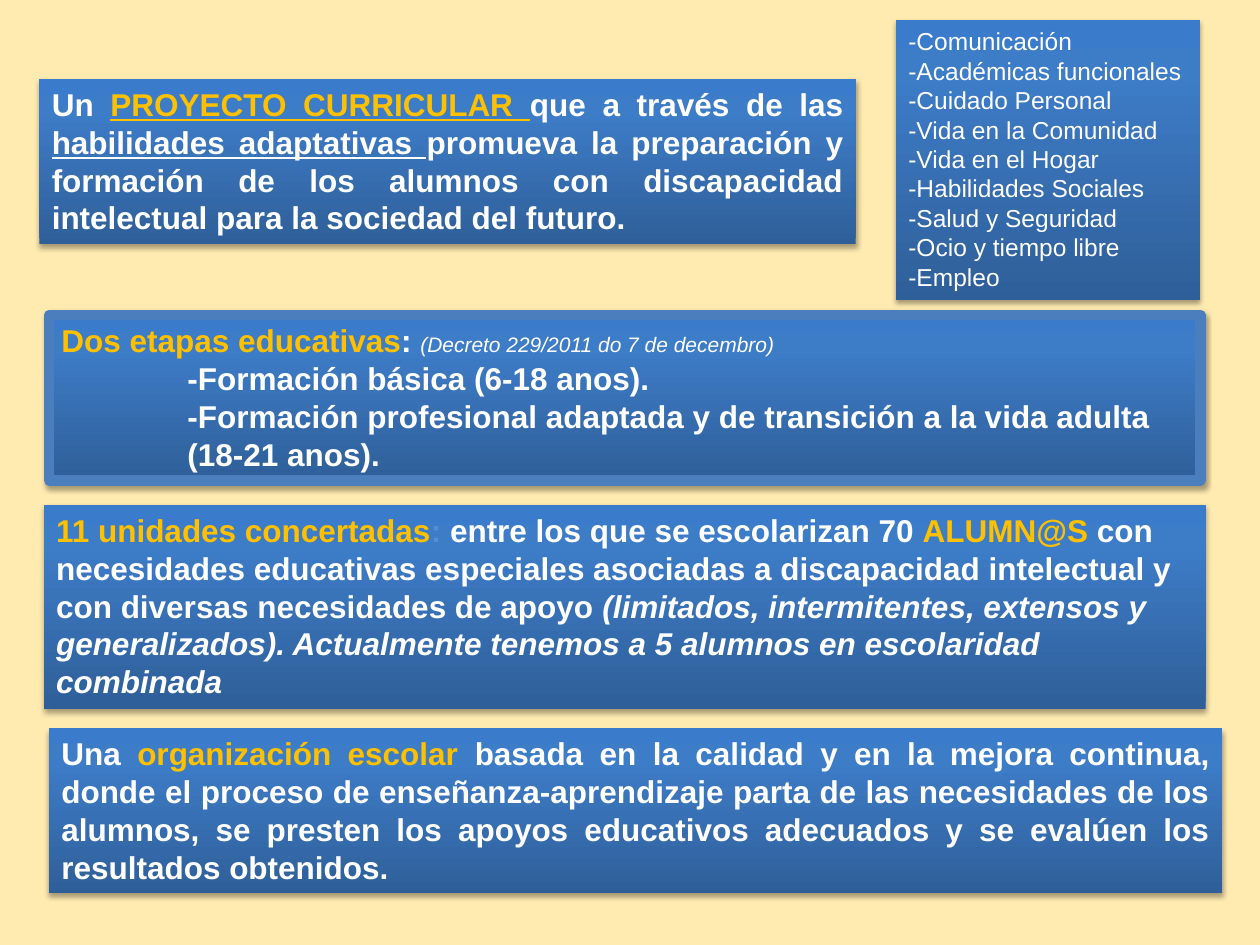
"""Build the slide that sums up a school's curricular project in five panels."""
from dataclasses import dataclass

from lxml import etree
from pptx import Presentation
from pptx.dml.color import RGBColor
from pptx.enum.shapes import MSO_SHAPE
from pptx.enum.text import MSO_ANCHOR, MSO_AUTO_SIZE, PP_ALIGN
from pptx.oxml.ns import qn
from pptx.util import Pt

RECTANGLE = MSO_SHAPE.RECTANGLE
TOP = MSO_ANCHOR.TOP
FIT_SHAPE = MSO_AUTO_SIZE.SHAPE_TO_FIT_TEXT
LEFT, JUSTIFY = PP_ALIGN.LEFT, PP_ALIGN.JUSTIFY


@dataclass(frozen=True)
class Theme:
    font: str = "Arial"
    background: str = "FFEBB0"
    text: str = "FFFFFF"
    accent: str = "FFC000"
    pale: str = "558ED5"
    border: str = "4B7EBC"
    gradient: tuple = ((0, "2F5F99"), (80, "3D7CC7"), (100, "3A7CCB"))
    body: int = 18
    list_size: int = 14
    note: int = 12
    indent: int = 72


THEME = Theme()
ACCENT = {"color": THEME.accent}
ITALIC = {"italic": True}
UNDERLINE = {"underline": True}
SKILLS = [
    "Comunicación", "Académicas funcionales", "Cuidado Personal",
    "Vida en la Comunidad", "Vida en el Hogar", "Habilidades Sociales",
    "Salud y Seguridad", "Ocio y tiempo libre", "Empleo",
]
STAGES = [
    "Formación básica (6-18 anos).",
    "Formación profesional adaptada y de transición a la vida adulta (18-21 anos).",
]
PANELS = [
    {
        "box": (28, 180, 658, 94.5),
        "border": 6,
        "paragraphs": [
            {"runs": [
                ("Dos etapas educativas", ACCENT),
                (": ", {}),
                ("(Decreto 229/2011 do 7 de decembro)",
                 {"size": THEME.note, "bold": False, "italic": True}),
            ]},
            *({"runs": [("-" + stage, {})], "indent": THEME.indent} for stage in STAGES),
        ],
    },
    {
        "box": (28, 416, 670.5, 94.5),
        "paragraphs": [{"align": JUSTIFY, "runs": [
            ("Una ", {}),
            ("organización escolar ", ACCENT),
            ("basada en la calidad y en la mejora continua, donde el proceso de "
             "enseñanza-aprendizaje parta de las necesidades de los alumnos, se presten "
             "los apoyos educativos adecuados y se evalúen los resultados obtenidos.", {}),
        ]}],
    },
    {
        "box": (25, 288.5, 664, 116.5),
        "paragraphs": [{"runs": [
            ("11 unidades concertadas", ACCENT),
            (": ", {"color": THEME.pale}),
            ("entre los que se escolarizan 70 ", {}),
            ("ALUMN@S ", ACCENT),
            ("con necesidades educativas especiales asociadas a discapacidad intelectual "
             "y con diversas necesidades de apoyo ", {}),
            ("(limitados, intermitentes, extensos y generalizados). Actualmente tenemos "
             "a 5 alumnos en escolaridad combinada", ITALIC),
        ]}],
    },
    {
        "box": (22.5, 45, 466.5, 94.5),
        "paragraphs": [{"align": JUSTIFY, "runs": [
            ("Un ", {}),
            ("PROYECTO CURRICULAR ", ACCENT | UNDERLINE),
            ("que a través de las ", {}),
            ("habilidades adaptativas ", UNDERLINE),
            ("promueva la preparación y formación de los alumnos con discapacidad "
             "intelectual para la sociedad del futuro.", {}),
        ]}],
    },
    {
        "box": (512, 11.5, 174, 160),
        "paragraphs": [
            {"runs": [("-" + skill, {"size": THEME.list_size, "bold": False})]}
            for skill in SKILLS
        ],
    },
]


def add_text(paragraph, text, size=THEME.body, color=THEME.text, bold=True,
             italic=False, underline=False):
    run = paragraph.add_run()
    run.text = text
    font = run.font
    font.name, font.size = THEME.font, Pt(size)
    font.bold, font.italic, font.underline = bold, italic, underline
    font.color.rgb = RGBColor.from_string(color)


def add_color(parent, color):
    return etree.SubElement(parent, qn("a:srgbClr"), val=color)


def style_panel(shape, border):
    shape.fill.gradient()
    shape.fill.gradient_angle = 90
    properties = shape.element.spPr
    stops = properties.find(".//" + qn("a:gsLst"))
    for stop in list(stops):
        stops.remove(stop)
    for position, color in THEME.gradient:
        add_color(etree.SubElement(stops, qn("a:gs"), pos=str(position * 1000)), color)

    if border:
        shape.line.color.rgb = RGBColor.from_string(THEME.border)
        shape.line.width = Pt(border)
    else:
        shape.line.fill.background()

    shape.shadow.inherit = False
    shadow = etree.SubElement(
        properties.find(qn("a:effectLst")), qn("a:outerShdw"),
        blurRad=str(Pt(3.1)), dist=str(Pt(1.8)), dir="5400000", rotWithShape="0")
    etree.SubElement(add_color(shadow, "000000"), qn("a:alpha"), val="35000")


def add_panel(slide, box, paragraphs, border=0):
    shape = slide.shapes.add_shape(RECTANGLE, *(Pt(length) for length in box))
    style_panel(shape, border)
    frame = shape.text_frame
    frame.word_wrap = True
    frame.auto_size = FIT_SHAPE
    frame.vertical_anchor = TOP
    for index, content in enumerate(paragraphs):
        paragraph = frame.add_paragraph() if index else frame.paragraphs[0]
        paragraph.alignment = content.get("align", LEFT)
        if "indent" in content:
            paragraph.level = 2
            paragraph._p.get_or_add_pPr().set("marL", str(Pt(content["indent"])))
        for text, style in content["runs"]:
            add_text(paragraph, text, **style)


def main():
    presentation = Presentation()
    presentation.slide_width, presentation.slide_height = Pt(720), Pt(540)
    slide = presentation.slides.add_slide(presentation.slide_layouts[6])
    background = slide.background.fill
    background.solid()
    background.fore_color.rgb = RGBColor.from_string(THEME.background)
    for panel in PANELS:
        add_panel(slide, **panel)
    presentation.save("out.pptx")


if __name__ == "__main__":
    main()
